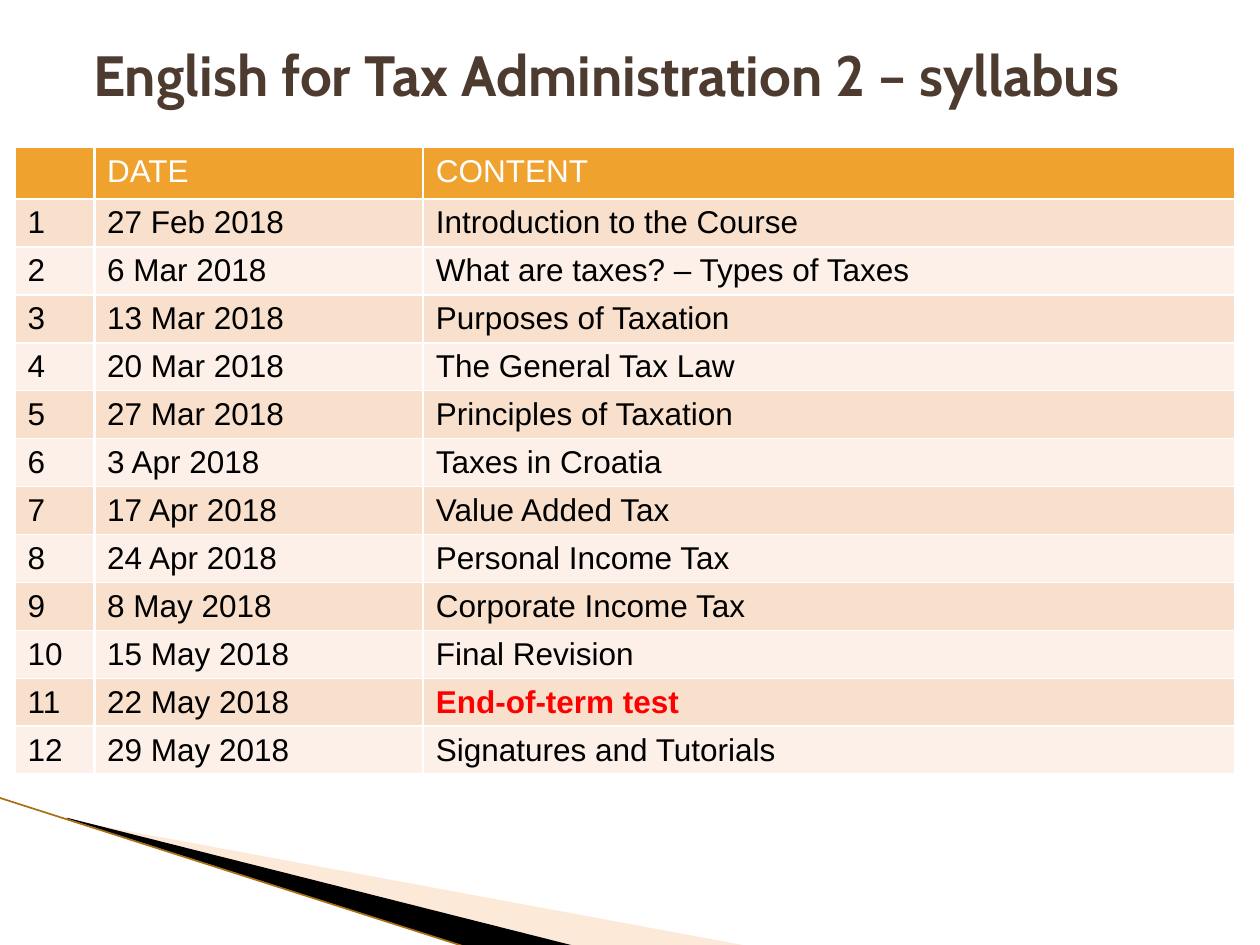
from lxml import etree
from pptx import Presentation, util as u
from pptx.dml.color import RGBColor
from pptx.enum import shapes, text
from pptx.oxml import ns

BROWN = RGBColor(0x4E, 0x3B, 0x30)
ORANGE = RGBColor(0xF0, 0xA2, 0x2E)
BANDS = [RGBColor(0xFC, 0xF0, 0xE8), RGBColor(0xF9, 0xE0, 0xCD)]
PEACH = RGBColor(0xFB, 0xC9, 0x9E)
OCHRE = RGBColor(0xA8, 0x6E, 0x14)
RED = RGBColor(0xFF, 0, 0)
BLACK = RGBColor(0, 0, 0)
WHITE = RGBColor(0xFF, 0xFF, 0xFF)

presentation = Presentation()
presentation.slide_width, presentation.slide_height = u.Inches(10), u.Inches(7.5)
slide = presentation.slides.add_slide(presentation.slide_layouts[6])

# Wedges rising from the bottom edge
wedges = [
    (PEACH, 40, [(0.55, 6.51), (5.95, 7.51), (4.56, 7.51), (0.55, 6.5)]),
    (BLACK, 100, [(0.53, 6.49), (4.57, 7.51), (3.72, 7.52), (0.54, 6.5)]),
]
for color, opacity, corners in wedges:
    points = [(u.Inches(x), u.Inches(y)) for x, y in corners]
    builder = slide.shapes.build_freeform(*points[0])
    builder.add_line_segments(points[1:], close=True)
    wedge = builder.convert_to_shape()
    wedge.shadow.inherit = False
    wedge.line.fill.background()
    wedge.fill.solid()
    wedge.fill.fore_color.rgb = color
    if opacity < 100:
        fill_color = wedge._element.spPr.find(".//" + ns.qn("a:srgbClr"))
        etree.SubElement(fill_color, ns.qn("a:alpha"), val=str(opacity * 1000))

# Thin edge along the wedges
edge = slide.shapes.add_connector(
    shapes.MSO_CONNECTOR.STRAIGHT,
    u.Inches(-0.01), u.Inches(6.33), u.Inches(3.71), u.Inches(7.52))
edge.line.color.rgb = OCHRE
edge.line.width = u.Pt(0.95)
etree.SubElement(edge._element.spPr, ns.qn("a:effectLst"))

# Syllabus table
lessons = [
    ("27 Feb 2018", "Introduction to the Course"),
    ("6 Mar 2018", "What are taxes? – Types of Taxes"),
    ("13 Mar 2018", "Purposes of Taxation"),
    ("20 Mar 2018", "The General Tax Law"),
    ("27 Mar 2018", "Principles of Taxation"),
    ("3 Apr 2018", "Taxes in Croatia"),
    ("17 Apr 2018", "Value Added Tax"),
    ("24 Apr 2018", "Personal Income Tax"),
    ("8 May 2018", "Corporate Income Tax"),
    ("15 May 2018", "Final Revision"),
    ("22 May 2018", "End-of-term test"),
    ("29 May 2018", "Signatures and Tutorials"),
]
rows = [("", "DATE", "CONTENT")]
rows += [(str(number), *lesson) for number, lesson in enumerate(lessons, 1)]
column_widths = [0.63, 2.61, 6.44]
header_height, row_height = 0.41, 0.38

frame = slide.shapes.add_table(
    len(rows), len(column_widths), u.Inches(0.12), u.Inches(1.17),
    u.Inches(sum(column_widths)),
    u.Inches(header_height + row_height * len(lessons)))
table = frame.table
for column, width in zip(table.columns, column_widths):
    column.width = u.Inches(width)

for row_index, values in enumerate(rows):
    is_header = row_index == 0
    table.rows[row_index].height = u.Inches(header_height if is_header else row_height)
    for column_index, value in enumerate(values):
        cell = table.cell(row_index, column_index)
        cell.text = value
        is_test = value == "End-of-term test"
        paragraph = cell.text_frame.paragraphs[0]
        for font in [paragraph.font] + [run.font for run in paragraph.runs]:
            font.name, font.size, font.bold = "Arial", u.Pt(18), is_test
            font.color.rgb = WHITE if is_header else RED if is_test else BLACK

        # White borders go before the cell fill
        properties = cell._tc.get_or_add_tcPr()
        for side, width in (("lnL", 1.5), ("lnR", 1.5), ("lnT", 1), ("lnB", 1)):
            border = etree.SubElement(
                properties, ns.qn("a:" + side), w=str(u.Pt(width)))
            solid = etree.SubElement(border, ns.qn("a:solidFill"))
            etree.SubElement(solid, ns.qn("a:srgbClr"), val=str(WHITE))
        cell.fill.solid()
        cell.fill.fore_color.rgb = ORANGE if is_header else BANDS[row_index % 2]

# Title
title = slide.shapes.add_textbox(
    u.Inches(0.64), u.Inches(0), u.Inches(9), u.Inches(1.17))
title.text_frame.word_wrap = True
title.text_frame.vertical_anchor = text.MSO_ANCHOR.MIDDLE
title.text_frame.text = "English for Tax Administration 2 – syllabus"
title_font = title.text_frame.paragraphs[0].runs[0].font
title_font.name, title_font.size, title_font.bold = "Cabin", u.Pt(32.4), True
title_font.color.rgb = BROWN

presentation.save("out.pptx")
